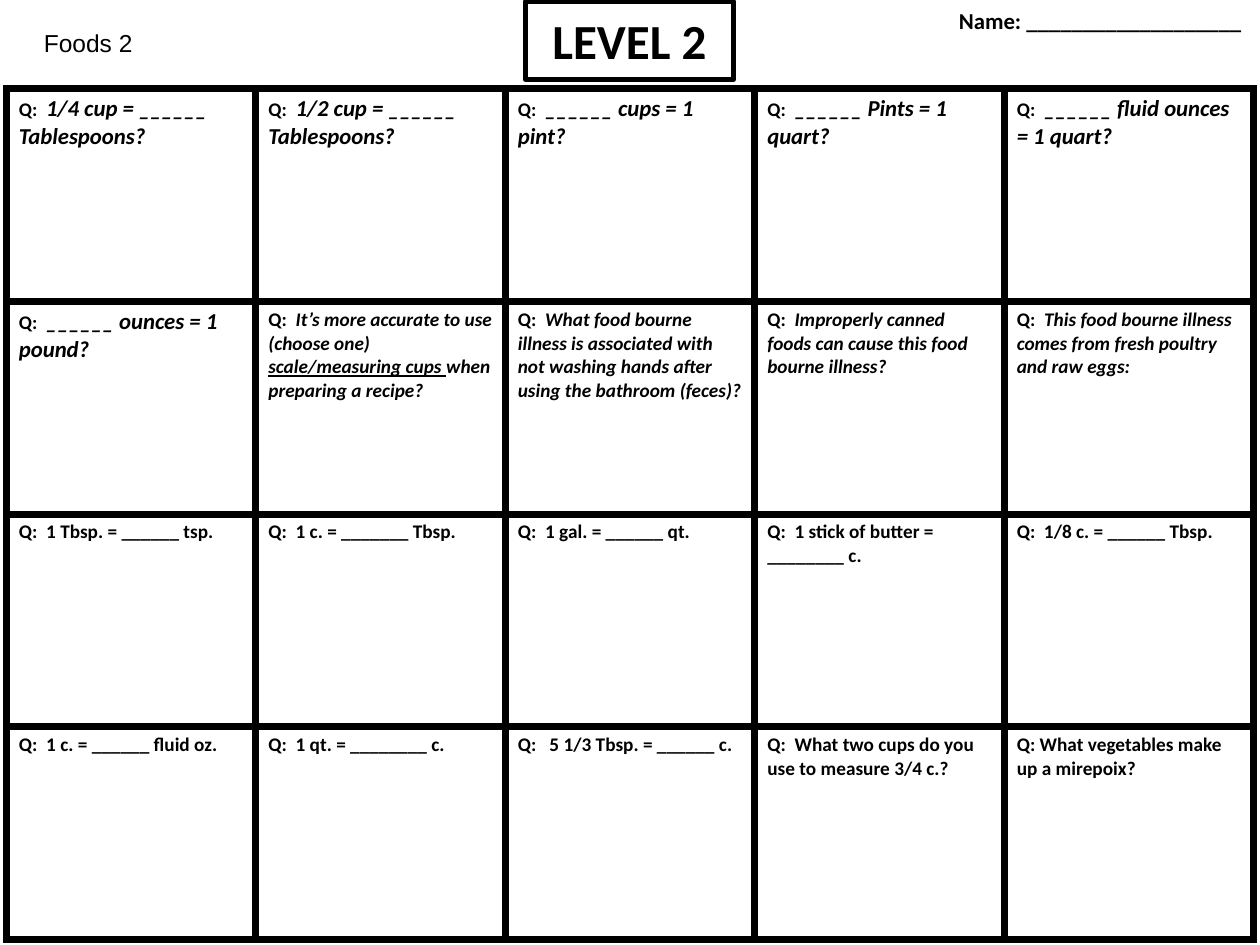
from lxml import etree
from pptx import Presentation
from pptx.dml.color import RGBColor
from pptx.enum.text import MSO_ANCHOR, MSO_AUTO_SIZE, PP_ALIGN
from pptx.oxml.ns import qn
from pptx.util import Inches, Pt

WIDTH, HEIGHT = Inches(10), Inches(7.5)
LEAD = "Q:  "


def colour(code):
    return RGBColor.from_string(code)


def measure(text):
    """A large italic question after a small lead; spans are (text, size, style)."""
    return [(LEAD, 11, ""), (text, 13, "i")]


def safety(*parts):
    """A small italic question; every second part is underlined."""
    styles = ("i", "iu")
    return [(LEAD, 11, "")] + [
        (part, 11, styles[index % 2]) for index, part in enumerate(parts)]


def plain(text):
    return [(text, 11, "")]


QUESTIONS = [
    [measure("1/4 cup = ______ Tablespoons?"),
     measure("1/2 cup = ______ Tablespoons?"),
     measure("______ cups = 1 pint?"),
     measure("______ Pints = 1 quart?"),
     measure("______ fluid ounces = 1 quart?")],
    [measure("______ ounces = 1 pound?"),
     safety("It’s more accurate to use (choose one) ",
            "scale/measuring cups ", "when preparing a recipe?"),
     safety("What food bourne illness is associated with not washing hands "
            "after using the bathroom (feces)?"),
     safety("Improperly canned foods can cause this food bourne illness?"),
     safety("This food bourne illness comes from fresh poultry and raw eggs:")],
    [plain("Q:  1 Tbsp. = ______ tsp."),
     plain("Q:  1 c. = _______ Tbsp."),
     plain("Q:  1 gal. = ______ qt."),
     plain("Q:  1 stick of butter = ________ c."),
     plain("Q:  1/8 c. = ______ Tbsp.")],
    [plain("Q:  1 c. = ______ fluid oz."),
     plain("Q:  1 qt. = ________ c."),
     plain("Q:   5 1/3 Tbsp. = ______ c."),
     plain("Q:  What two cups do you use to measure 3/4 c.?"),
     plain("Q: What vegetables make up a mirepoix?")],
]


class Worksheet:
    """Holds the style and the current slide; areas are percent of the slide."""
    ink = "000000"
    heading_font = "Calibri"
    label_font = "Arial"
    border = 4.5

    def __init__(self, deck):
        self.page = deck.slides.add_slide(deck.slide_layouts[0])

    def area(self, left, top, width, height):
        return (int(WIDTH * left / 100), int(HEIGHT * top / 100),
                int(WIDTH * width / 100), int(HEIGHT * height / 100))

    def format(self, para, font, size=None, bold=True):
        para.font.name = font
        para.font.bold = bold
        para.font.color.rgb = colour(self.ink)
        if size:
            para.font.size = Pt(size)

    def placeholder(self, box, text, area, size, anchor):
        box.left, box.top, box.width, box.height = self.area(*area)
        frame = box.text_frame
        frame.text = text
        frame.word_wrap = True
        frame.auto_size = MSO_AUTO_SIZE.NONE
        frame.vertical_anchor = anchor
        para = frame.paragraphs[0]
        para.alignment = PP_ALIGN.CENTER
        self.format(para, self.heading_font, size)
        return box

    def title(self, text, area):
        box = self.placeholder(self.page.shapes.title, text, area, 28,
                               MSO_ANCHOR.MIDDLE)
        box.line.color.rgb = colour(self.ink)
        box.line.width = Pt(3)

    def name_line(self, text, area):
        self.placeholder(self.page.placeholders[1], text, area, 13,
                         MSO_ANCHOR.TOP)

    def label(self, text, area):
        box = self.page.shapes.add_textbox(*self.area(*area))
        frame = box.text_frame
        frame.text = text
        frame.word_wrap = True
        frame.auto_size = MSO_AUTO_SIZE.SHAPE_TO_FIT_TEXT
        self.format(frame.paragraphs[0], self.label_font, 14, bold=False)

    def question_table(self, questions, area):
        rows, columns = len(questions), len(questions[0])
        table = self.page.shapes.add_table(rows, columns, *self.area(*area)).table
        table.first_row = table.horz_banding = False
        for row, line in enumerate(questions):
            for column, spans in enumerate(line):
                self.question(table.cell(row, column), spans)

    def question(self, cell, spans):
        self.outline(cell)
        cell.fill.background()
        para = cell.text_frame.paragraphs[0]
        sizes = {size for _, size, _ in spans}
        shared = sizes.pop() if len(sizes) == 1 else None
        self.format(para, self.heading_font, shared)
        for text, size, style in spans:
            span = para.add_run()
            span.text = text
            if not shared:
                span.font.size = Pt(size)
            if "i" in style:
                span.font.italic = True
            if "u" in style:
                span.font.underline = True

    def outline(self, cell):
        properties = cell._tc.get_or_add_tcPr()
        for side in ("a:lnL", "a:lnR", "a:lnT", "a:lnB"):
            edge = etree.SubElement(properties, qn(side), w=str(Pt(self.border)))
            fill = etree.SubElement(edge, qn("a:solidFill"))
            etree.SubElement(fill, qn("a:srgbClr"), val=self.ink)


def main():
    deck = Presentation()
    deck.slide_width, deck.slide_height = WIDTH, HEIGHT
    sheet = Worksheet(deck)
    sheet.label("Foods 2", (2.5, 2.27, 16.7, 4.53))
    sheet.title("LEVEL 2", (41.7, 0.13, 16.5, 8.27))
    sheet.name_line("Name: ___________________", (74.6, 0, 25.4, 4.8))
    sheet.question_table(QUESTIONS, (0.5, 9.4, 99, 90))
    deck.save("out.pptx")


if __name__ == "__main__":
    main()
